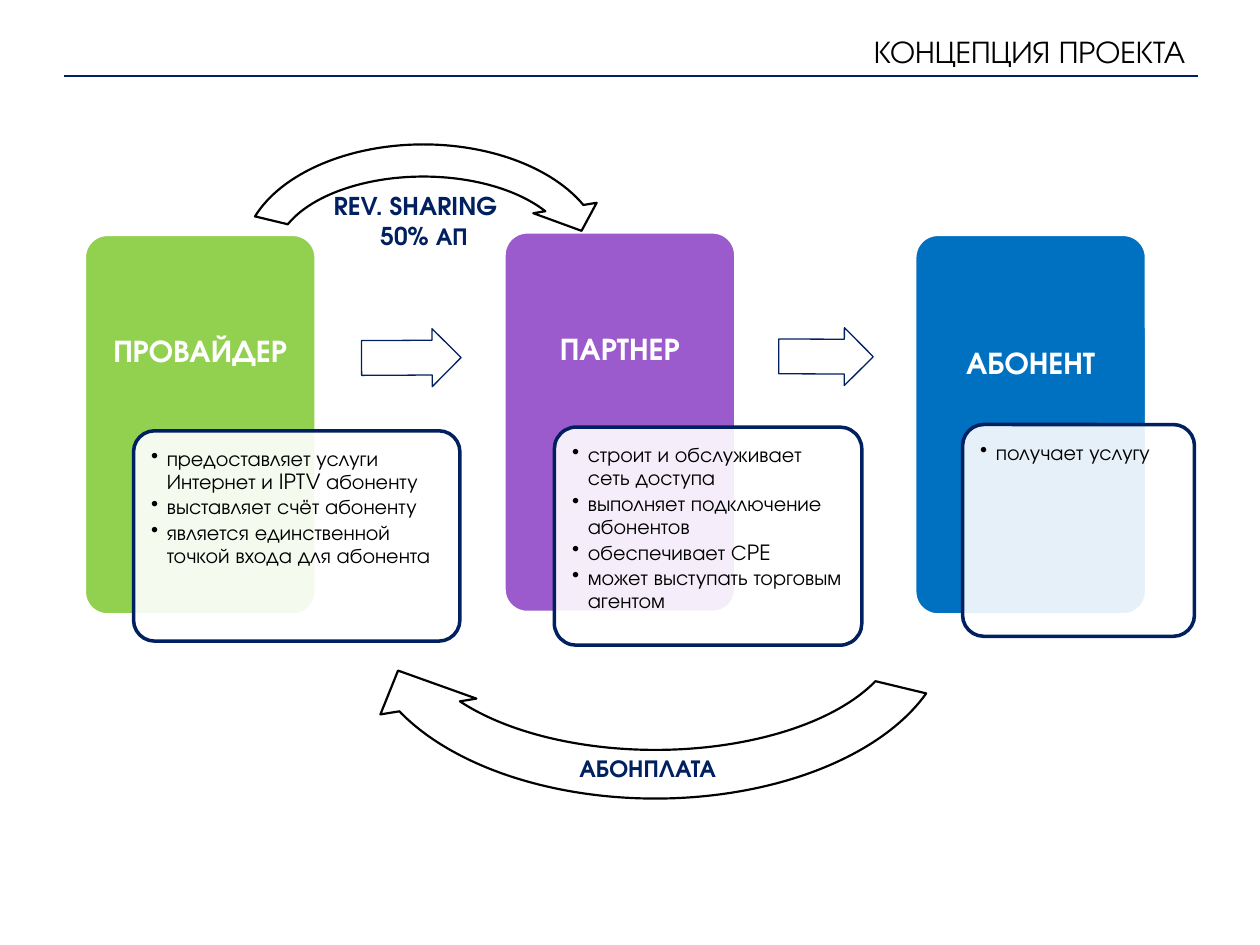
from lxml.etree import SubElement
from pptx import Presentation
from pptx.dml.color import RGBColor
from pptx.enum.shapes import MSO_CONNECTOR, MSO_SHAPE
from pptx.enum.text import MSO_ANCHOR, PP_ALIGN
from pptx.oxml.ns import qn
from pptx.util import Pt

FONT = "TeX Gyre Adventor"
BLACK = RGBColor(0x00, 0x00, 0x00)
WHITE = RGBColor(0xFF, 0xFF, 0xFF)
NAVY = RGBColor(0x00, 0x20, 0x60)
GREEN = RGBColor(0x92, 0xD0, 0x50)
PURPLE = RGBColor(0x9C, 0x5B, 0xCD)
BLUE = RGBColor(0x00, 0x70, 0xC0)

CARD_WIDTH, CARD_HEIGHT = 132.5, 217.5

# heading, colour, card left and top, space below heading, duties box, duties
PARTIES = [
    ("ПРОВАЙДЕР", GREEN, 48.2, 133.9, 85, (76.3, 246.2, 186.5, 120.2),
     ["предоставляет услуги Интернет и IPTV абоненту",
      "выставляет счёт абоненту",
      "является единственной точкой входа для абонента"]),
    ("ПАРТНЕР", PURPLE, 288, 132.5, 85, (316.8, 244.1, 175.7, 124.6),
     ["строит и обслуживает сеть доступа",
      "выполняет подключение абонентов",
      "обеспечивает СPE",
      "может выступать торговым агентом"]),
    ("АБОНЕНТ", BLUE, 522.7, 133.9, 72, (550.1, 242.6, 132.5, 121),
     ["получает услугу"]),
]


def style_text(paragraph, size, color, bold=False):
    for run in paragraph.runs:
        run.font.name = FONT
        run.font.size = Pt(size)
        run.font.bold = bold
        run.font.color.rgb = color


def add_outlined(slide, kind, box, line, weight, fill=None, adjustments=()):
    """Add a preset shape without shadow; no fill colour means hollow."""
    shape = slide.shapes.add_shape(kind, *map(Pt, box))
    shape.shadow.inherit = False
    if fill is None:
        shape.fill.background()
    else:
        shape.fill.solid()
        shape.fill.fore_color.rgb = fill
    shape.line.color.rgb = line
    shape.line.width = Pt(weight)
    for index, value in enumerate(adjustments):
        shape.adjustments[index] = value
    return shape


def add_title(slide, text):
    title = slide.shapes.title
    title.left, title.top, title.width, title.height = map(Pt, (36.7, 15.1, 648, 27.4))
    title.text_frame.text = text
    title.text_frame.vertical_anchor = MSO_ANCHOR.MIDDLE
    heading = title.text_frame.paragraphs[0]
    heading.alignment = PP_ALIGN.RIGHT
    style_text(heading, 18, BLACK)


def add_rule(slide):
    rule = slide.shapes.add_connector(
        MSO_CONNECTOR.STRAIGHT, Pt(36.7), Pt(43.2), Pt(684.7), Pt(43.2))
    rule.line.color.rgb = NAVY
    rule.line.width = Pt(1.25)
    SubElement(rule._element.spPr, qn("a:effectLst"))


def add_card(slide, heading, color, left, top, space_below):
    card = add_outlined(slide, MSO_SHAPE.ROUNDED_RECTANGLE,
                        (left, top, CARD_WIDTH, CARD_HEIGHT), WHITE, 2, color, [0.1])
    frame = card.text_frame
    frame.margin_left = frame.margin_right = frame.margin_top = 0
    frame.margin_bottom = Pt(space_below)
    frame.vertical_anchor = MSO_ANCHOR.MIDDLE
    frame.text = heading
    frame.paragraphs[0].alignment = PP_ALIGN.CENTER
    style_text(frame.paragraphs[0], 18, WHITE, bold=True)


def add_duties(slide, box, duties):
    panel = add_outlined(slide, MSO_SHAPE.ROUNDED_RECTANGLE, box, NAVY, 2, WHITE, [0.1])
    fill_color = panel._element.spPr.find(qn("a:solidFill")).find(qn("a:srgbClr"))
    SubElement(fill_color, qn("a:alpha"), val="90000")

    frame = panel.text_frame
    frame.margin_left = frame.margin_right = Pt(6.5)
    frame.margin_top = frame.margin_bottom = Pt(6.5)
    frame.vertical_anchor = MSO_ANCHOR.TOP
    frame.text = "\n".join(duties)
    for duty in frame.paragraphs:
        duty.alignment = PP_ALIGN.LEFT
        duty.line_spacing = 0.9
        duty.space_after = Pt(1.8)
        style_text(duty, 12, BLACK)
        properties = duty._p.get_or_add_pPr()
        properties.set("marL", str(Pt(9)))
        properties.set("indent", str(-Pt(9)))
        SubElement(properties, qn("a:buChar"), char="•")


def add_step_arrow(slide, box, rotation, fill=None):
    arrow = add_outlined(slide, MSO_SHAPE.RIGHT_ARROW, box, NAVY, 0.75, fill, [0.6, 0.5])
    arrow.rotation = rotation


def add_payment_arrow(slide, box, rotation=0):
    arrow = add_outlined(slide, MSO_SHAPE.CIRCULAR_ARROW, box, BLACK, 1.25,
                         adjustments=[0.125, 5.813, 204.577, 116.118, 0.125])
    arrow.line.color.rgb = BLACK
    arrow.rotation = rotation


def add_label(slide, box, text, wrap):
    label = slide.shapes.add_textbox(*map(Pt, box))
    label.text_frame.word_wrap = wrap
    label.text_frame.text = text
    for line in label.text_frame.paragraphs:
        style_text(line, 14, NAVY, bold=True)
    return label


def main():
    presentation = Presentation()
    presentation.slide_width, presentation.slide_height = Pt(720), Pt(540)
    slide = presentation.slides.add_slide(presentation.slide_layouts[5])

    # Header
    add_title(slide, "КОНЦЕПЦИЯ ПРОЕКТА")
    add_rule(slide)

    # Parties and the service flow between them
    for heading, color, left, top, space_below, duties_box, duties in PARTIES:
        add_card(slide, heading, color, left, top, space_below)
        add_duties(slide, duties_box, duties)
    add_step_arrow(slide, (206.6, 187.9, 56.9, 33.1), 359.7)
    add_step_arrow(slide, (445, 187.2, 54, 33.1), 0.2, WHITE)

    # Payment flows
    add_payment_arrow(slide, (193, 247.7, 362.9, 222.5), 180)
    add_label(slide, (324, 427, 100.8, 24.5), "АБОНПЛАТА", wrap=False)
    add_payment_arrow(slide, (129.6, 73.4, 224.6, 146.9))
    sharing = add_label(slide, (183.6, 105.8, 117.4, 41), "REV. SHARING\n50% АП", wrap=True)
    sharing.text_frame.paragraphs[1].alignment = PP_ALIGN.CENTER

    presentation.save("out.pptx")


if __name__ == "__main__":
    main()
